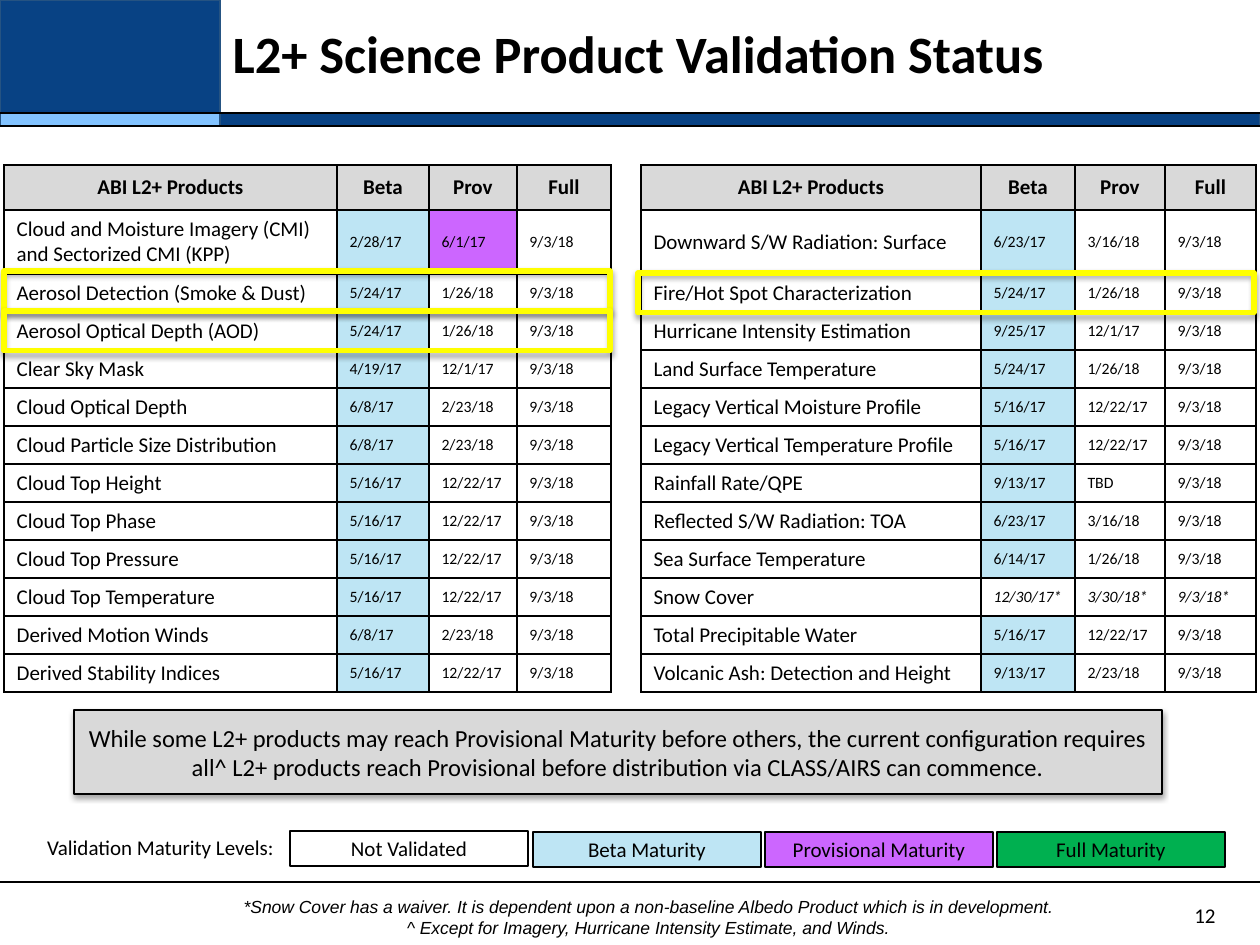
from typing import NamedTuple

from lxml.etree import SubElement
from pptx import Presentation
from pptx.dml.color import RGBColor
from pptx.enum.shapes import MSO_CONNECTOR, MSO_SHAPE
from pptx.enum.text import MSO_ANCHOR as Anchor, MSO_AUTO_SIZE, PP_ALIGN as Align
from pptx.oxml import parse_xml
from pptx.oxml.ns import nsdecls, qn
from pptx.util import Emu, Pt

EMU_PER_PX = 914400 / 126
COLORS = {
    "black": "000000", "white": "FFFFFF", "gray": "D9D9D9", "navy": "084284",
    "sky": "82C3FF", "edge": "255382", "beta": "BEE5F4", "provisional": "CC66FF",
    "full": "00B050", "highlight": "FFFF00",
}
NO_STYLE = "{2D5ABB26-0587-4C30-8999-92F81FD0307C}"
HEADERS = ("ABI L2+ Products", "Beta", "Prov", "Full")
COLUMN_WIDTHS = (333, 92, 88, 94, 30, 340, 94, 90, 91)
ROW_HEIGHTS = (45, 64) + (38,) * 11
GAP_COLUMN = 4


class Box(NamedTuple):
    left: int
    top: int
    width: int
    height: int


class Product(NamedTuple):
    name: str
    beta: str
    prov: str
    full: str = "9/3/18"
    provisional: bool = False
    waived: bool = False


class Level(NamedTuple):
    label: str
    color: str
    box: Box


LEFT_PRODUCTS = (
    Product("Cloud and Moisture Imagery (CMI) and Sectorized CMI (KPP)",
            "2/28/17", "6/1/17", provisional=True),
    Product("Aerosol Detection (Smoke & Dust)", "5/24/17", "1/26/18"),
    Product("Aerosol Optical Depth (AOD)", "5/24/17", "1/26/18"),
    Product("Clear Sky Mask", "4/19/17", "12/1/17"),
    Product("Cloud Optical Depth", "6/8/17", "2/23/18"),
    Product("Cloud Particle Size Distribution", "6/8/17", "2/23/18"),
    Product("Cloud Top Height", "5/16/17", "12/22/17"),
    Product("Cloud Top Phase", "5/16/17", "12/22/17"),
    Product("Cloud Top Pressure", "5/16/17", "12/22/17"),
    Product("Cloud Top Temperature", "5/16/17", "12/22/17"),
    Product("Derived Motion Winds", "6/8/17", "2/23/18"),
    Product("Derived Stability Indices", "5/16/17", "12/22/17"),
)
RIGHT_PRODUCTS = (
    Product("Downward S/W Radiation: Surface", "6/23/17", "3/16/18"),
    Product("Fire/Hot Spot Characterization", "5/24/17", "1/26/18"),
    Product("Hurricane Intensity Estimation", "9/25/17", "12/1/17"),
    Product("Land Surface Temperature", "5/24/17", "1/26/18"),
    Product("Legacy Vertical Moisture Profile", "5/16/17", "12/22/17"),
    Product("Legacy Vertical Temperature Profile", "5/16/17", "12/22/17"),
    Product("Rainfall Rate/QPE", "9/13/17", "TBD"),
    Product("Reflected S/W Radiation: TOA", "6/23/17", "3/16/18"),
    Product("Sea Surface Temperature", "6/14/17", "1/26/18"),
    Product("Snow Cover", "12/30/17*", "3/30/18*", "9/3/18*", waived=True),
    Product("Total Precipitable Water", "5/16/17", "12/22/17"),
    Product("Volcanic Ash: Detection and Height", "9/13/17", "2/23/18"),
)
LEVELS = (
    Level("Not Validated", "white", Box(290, 831, 238, 35)),
    Level("Beta Maturity", "beta", Box(533, 832, 228, 35)),
    Level("Provisional Maturity", "provisional", Box(765, 832, 228, 35)),
    Level("Full Maturity", "full", Box(997, 832, 228, 35)),
)
HIGHLIGHTS = (Box(4, 271, 606, 40), Box(4, 311, 606, 40), Box(638, 273, 616, 40))
CALLOUT = ("While some L2+ products may reach Provisional Maturity before others, "
           "the current configuration requires all^ L2+ products reach Provisional "
           "before distribution via CLASS/AIRS can commence.")
FOOTNOTES = ("*Snow Cover has a waiver. It is dependent upon a non-baseline Albedo "
             "Product which is in development.\n"
             "^ Except for Imagery, Hurricane Intensity Estimate, and Winds.")


def px(length: int) -> Emu:
    return Emu(round(length * EMU_PER_PX))


def emu(box: Box) -> list[Emu]:
    return [px(length) for length in box]


def rgb(color: str) -> RGBColor:
    return RGBColor.from_string(COLORS[color])


def write(frame, text: str, size: int, align=Align.CENTER, font: str = "Calibri",
          bold: bool = False, italic: bool = False) -> None:
    frame.text = text
    for paragraph in frame.paragraphs:
        paragraph.alignment = align
        style = paragraph.font
        style.name, style.size = font, Pt(size)
        style.bold, style.italic = bold, italic
        style.color.rgb = rgb("black")


def add_text(slide, box: Box, text: str, size: int, anchor=Anchor.MIDDLE,
             wrap: bool = True, **style) -> None:
    frame = slide.shapes.add_textbox(*emu(box)).text_frame
    frame.word_wrap, frame.vertical_anchor = wrap, anchor
    write(frame, text, size, **style)


def add_box(slide, box: Box, fill: str | None, line: str = "black", weight: float = 0.75,
            text: str = "", size: int = 12, shadow: bool = False) -> None:
    shape = slide.shapes.add_shape(MSO_SHAPE.RECTANGLE, *emu(box))
    shape.shadow.inherit = False
    if fill:
        shape.fill.solid()
        shape.fill.fore_color.rgb = rgb(fill)
    else:
        shape.fill.background()
    shape.line.color.rgb, shape.line.width = rgb(line), Pt(weight)
    if text:
        shape.text_frame.vertical_anchor = Anchor.MIDDLE
        write(shape.text_frame, text, size)
    if shadow:
        shape._element.spPr.find(qn("a:effectLst")).append(parse_xml(
            f'<a:outerShdw {nsdecls("a")} blurRad="40000" dist="23000" dir="5400000" '
            'rotWithShape="0"><a:srgbClr val="000000"><a:alpha val="35000"/></a:srgbClr>'
            '</a:outerShdw>'))


def add_rule(slide, top: int) -> None:
    """Draw a black line across the whole slide."""
    rule = slide.shapes.add_connector(MSO_CONNECTOR.STRAIGHT, 0, px(top), px(1260), px(top))
    rule.line.color.rgb, rule.line.width = rgb("black"), Pt(1)
    SubElement(rule._element.spPr, qn("a:effectLst"))


def set_borders(cell, sides: str) -> None:
    for position, side in enumerate(sides):
        cell._tc.get_or_add_tcPr().insert(position, parse_xml(
            f'<a:ln{side} {nsdecls("a")} w="12700"><a:solidFill>'
            f'<a:srgbClr val="{COLORS["black"]}"/></a:solidFill></a:ln{side}>'))


def fill_cell(cell, text: str, fill: str, size: int, **style) -> None:
    cell.vertical_anchor = Anchor.MIDDLE
    cell.fill.solid()
    cell.fill.fore_color.rgb = rgb(fill)
    write(cell.text_frame, text, size, **style)
    set_borders(cell, "LRTB")


def fill_products(table, first: int, products: tuple[Product, ...]) -> None:
    for offset, header in enumerate(HEADERS):
        fill_cell(table.cell(0, first + offset), header, "gray", 12, bold=True)
    for row, product in enumerate(products, 1):
        fills = ("white", "white" if product.waived else "beta",
                 "provisional" if product.provisional else "white", "white")
        for offset, (text, fill) in enumerate(zip(product[:4], fills)):
            fill_cell(table.cell(row, first + offset), text, fill, 9 if offset else 12,
                      align=Align.LEFT, italic=product.waived and offset > 0)


def add_status_table(slide) -> None:
    box = Box(4, 165, sum(COLUMN_WIDTHS), sum(ROW_HEIGHTS))
    table = slide.shapes.add_table(len(ROW_HEIGHTS), len(COLUMN_WIDTHS), *emu(box)).table
    table.first_row = table.horz_banding = False
    table._tbl.tblPr.find(qn("a:tableStyleId")).text = NO_STYLE
    for column, width in zip(table.columns, COLUMN_WIDTHS):
        column.width = px(width)
    for row, height in zip(table.rows, ROW_HEIGHTS):
        row.height = px(height)
    fill_products(table, 0, LEFT_PRODUCTS)
    fill_products(table, GAP_COLUMN + 1, RIGHT_PRODUCTS)
    for row in range(len(ROW_HEIGHTS)):
        gap = table.cell(row, GAP_COLUMN)
        gap.margin_top = gap.margin_bottom = 0
        gap.fill.background()
        gap.text_frame.paragraphs[0].font.size = Pt(12)
        set_borders(gap, "LR")
    table.cell(1, GAP_COLUMN).merge(table.cell(len(ROW_HEIGHTS) - 1, GAP_COLUMN))


def main() -> None:
    deck = Presentation()
    deck.slide_width, deck.slide_height = px(1260), px(945)
    slide = deck.slides.add_slide(deck.slide_layouts[5])

    title = slide.shapes.title
    title.left, title.top, title.width, title.height = emu(Box(220, 0, 1008, 113))
    title.text_frame.vertical_anchor = Anchor.MIDDLE
    title.text_frame.auto_size = MSO_AUTO_SIZE.NONE
    write(title.text_frame, "L2+ Science Product Validation Status", 30,
          align=Align.LEFT, bold=True)
    title.text_frame.paragraphs[0].line_spacing = 0.9

    add_box(slide, Box(0, 0, 220, 113), "navy", "edge")
    add_box(slide, Box(220, 113, 1040, 13), "navy", "edge")
    add_box(slide, Box(0, 113, 220, 13), "sky", "edge")
    for top in (126, 113, 882):
        add_rule(slide, top)

    for level in LEVELS:
        add_box(slide, level.box, level.color, text=level.label)
    add_text(slide, Box(13, 829, 295, 37), "Validation Maturity Levels:", 12)
    add_status_table(slide)
    add_text(slide, Box(227, 890, 842, 55), FOOTNOTES, 10, anchor=Anchor.TOP, wrap=False,
             font="Arial", italic=True)
    for box in HIGHLIGHTS:
        add_box(slide, box, None, "highlight", 3, shadow=True)
    add_box(slide, Box(74, 710, 1088, 84), "gray", weight=1.5, text=CALLOUT, size=14,
            shadow=True)
    add_text(slide, Box(989, 890, 239, 50), "12", 12, align=Align.RIGHT)
    deck.save("out.pptx")


if __name__ == "__main__":
    main()
